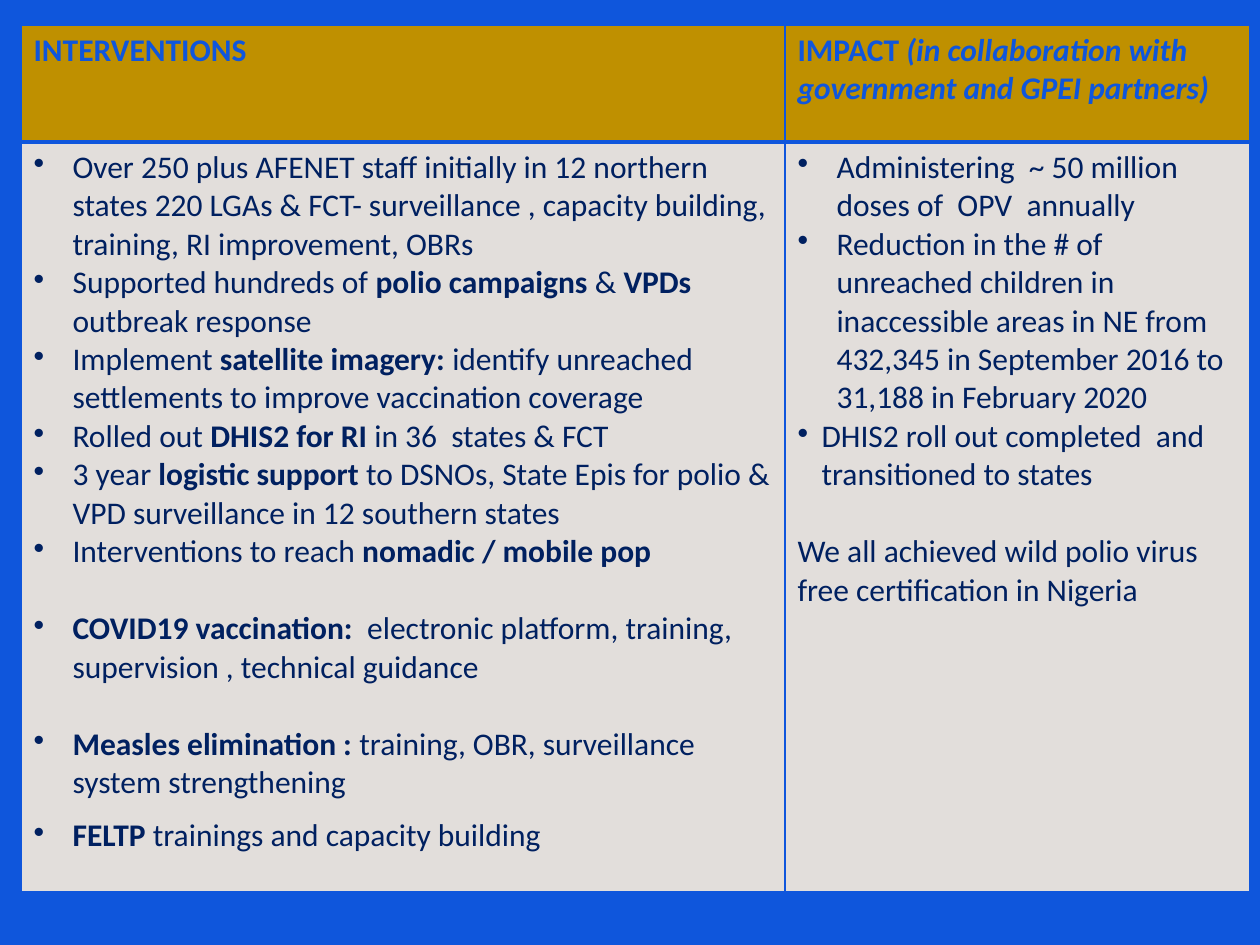
import dataclasses
import typing

import lxml.etree
import pptx
import pptx.dml.color
import pptx.oxml.ns
import pptx.util

SCALE = 914400 / 126


@dataclasses.dataclass(frozen=True)
class Theme:
    blue: str = "0F56DC"
    gold: str = "BF9000"
    gray: str = "E2DEDB"
    navy: str = "002060"
    font: str = "Calibri"
    size: int = 18
    line: int = 1
    rule: int = 3


class Run(typing.NamedTuple):
    text: str
    bold: bool = False
    slant: bool = False


class Para(typing.NamedTuple):
    runs: list[Run]
    indent: int = 0
    gap: float = 0


class Box(typing.NamedTuple):
    row: int
    col: int
    paras: list[Para]


THEME = Theme()
LINE = 22
DEEP = 39
NEAR = 24

HEADS = [
    Box(0, 0, [Para([Run("INTERVENTIONS", True)])]),
    Box(0, 1, [Para([
        Run("IMPACT ", True),
        Run("(in collaboration with government and GPEI partners)", True, True),
    ])]),
]

WORK = [
    Para([Run("Over 250 plus AFENET staff initially in 12 northern states 220 LGAs & FCT- "
              "surveillance , capacity building, training, RI improvement, OBRs")], DEEP),
    Para([Run("Supported hundreds of "), Run("polio campaigns ", True), Run("& "),
          Run("VPDs", True), Run(" outbreak response")], DEEP),
    Para([Run("Implement "), Run("satellite imagery: ", True),
          Run("identify unreached settlements to improve vaccination coverage")], DEEP),
    Para([Run("Rolled out "), Run("DHIS2 for RI ", True), Run("in 36  states & FCT")], DEEP),
    Para([Run("3 year "), Run("logistic support ", True),
          Run("to DSNOs, State Epis for polio & VPD surveillance in 12 southern states")], DEEP),
    Para([Run("Interventions to reach "), Run("nomadic / mobile pop", True)], DEEP),
    Para([Run("COVID19 vaccination:  ", True),
          Run("electronic platform, training, supervision , technical guidance")], DEEP, LINE),
    Para([Run("Measles elimination : ", True),
          Run("training, OBR, surveillance system strengthening")], DEEP, LINE),
    Para([Run("FELTP", True), Run(" trainings and capacity building")], DEEP, 8.5),
]

GAINS = [
    Para([Run("Administering  ~ 50 million doses of  OPV  annually")], DEEP),
    Para([Run("Reduction in the # of unreached children in inaccessible areas in NE from "
              "432,345 in September 2016 to  31,188 in February 2020")], DEEP),
    Para([Run("DHIS2 roll out completed  and transitioned to states")], NEAR),
    Para([Run("We all achieved wild polio virus free certification in Nigeria")], 0, LINE),
]

BODIES = [Box(1, 0, WORK), Box(1, 1, GAINS)]


def px(count: int) -> pptx.util.Emu:
    return pptx.util.Emu(round(count * SCALE))


def rgb(code: str) -> pptx.dml.color.RGBColor:
    return pptx.dml.color.RGBColor.from_string(code)


def add_node(parent: typing.Any, name: str, **attrs: str) -> typing.Any:
    return lxml.etree.SubElement(parent, pptx.oxml.ns.qn(name), **attrs)


def add_edges(cell: typing.Any, top: int, base: int) -> None:
    props = cell._tc.get_or_add_tcPr()
    for side, width in zip("LRTB", (THEME.line, THEME.line, top, base)):
        edge = add_node(props, f"a:ln{side}", w=str(pptx.util.Pt(width)))
        add_node(add_node(edge, "a:solidFill"), "a:srgbClr", val=THEME.blue)


def add_para(target: typing.Any, para: Para, ink: str) -> None:
    if para.indent:
        props = target._p.get_or_add_pPr()
        props.set("marL", str(px(para.indent)))
        props.set("indent", str(-px(para.indent)))
        add_node(props, "a:buChar", char="•")
    if para.gap:
        target.space_before = pptx.util.Pt(para.gap)
    for part in para.runs:
        run = target.add_run()
        run.text = part.text
        run.font.name = THEME.font
        run.font.size = pptx.util.Pt(THEME.size)
        run.font.bold = part.bold
        run.font.italic = part.slant
        run.font.color.rgb = rgb(ink)


def fill_cell(table: typing.Any, box: Box, fill: str, ink: str) -> None:
    cell = table.cell(box.row, box.col)
    edges = (THEME.line, THEME.rule) if box.row == 0 else (THEME.rule, THEME.line)
    add_edges(cell, *edges)
    cell.fill.solid()
    cell.fill.fore_color.rgb = rgb(fill)
    frame = cell.text_frame
    for index, para in enumerate(box.paras):
        target = frame.paragraphs[0] if index == 0 else frame.add_paragraph()
        add_para(target, para, ink)


def main() -> None:
    deck = pptx.Presentation()
    deck.slide_width, deck.slide_height = px(1260), px(945)
    slide = deck.slides.add_slide(deck.slide_layouts[6])
    slide.background.fill.solid()
    slide.background.fill.fore_color.rgb = rgb(THEME.blue)

    widths, heights = (764, 465), (117, 750)
    table = slide.shapes.add_table(
        2, 2, px(21), px(25), px(sum(widths)), px(sum(heights))
    ).table
    for column, width in zip(table.columns, widths):
        column.width = px(width)
    for row, height in zip(table.rows, heights):
        row.height = px(height)
    for box in HEADS:
        fill_cell(table, box, THEME.gold, THEME.blue)
    for box in BODIES:
        fill_cell(table, box, THEME.gray, THEME.navy)
    deck.save("out.pptx")


if __name__ == "__main__":
    main()
